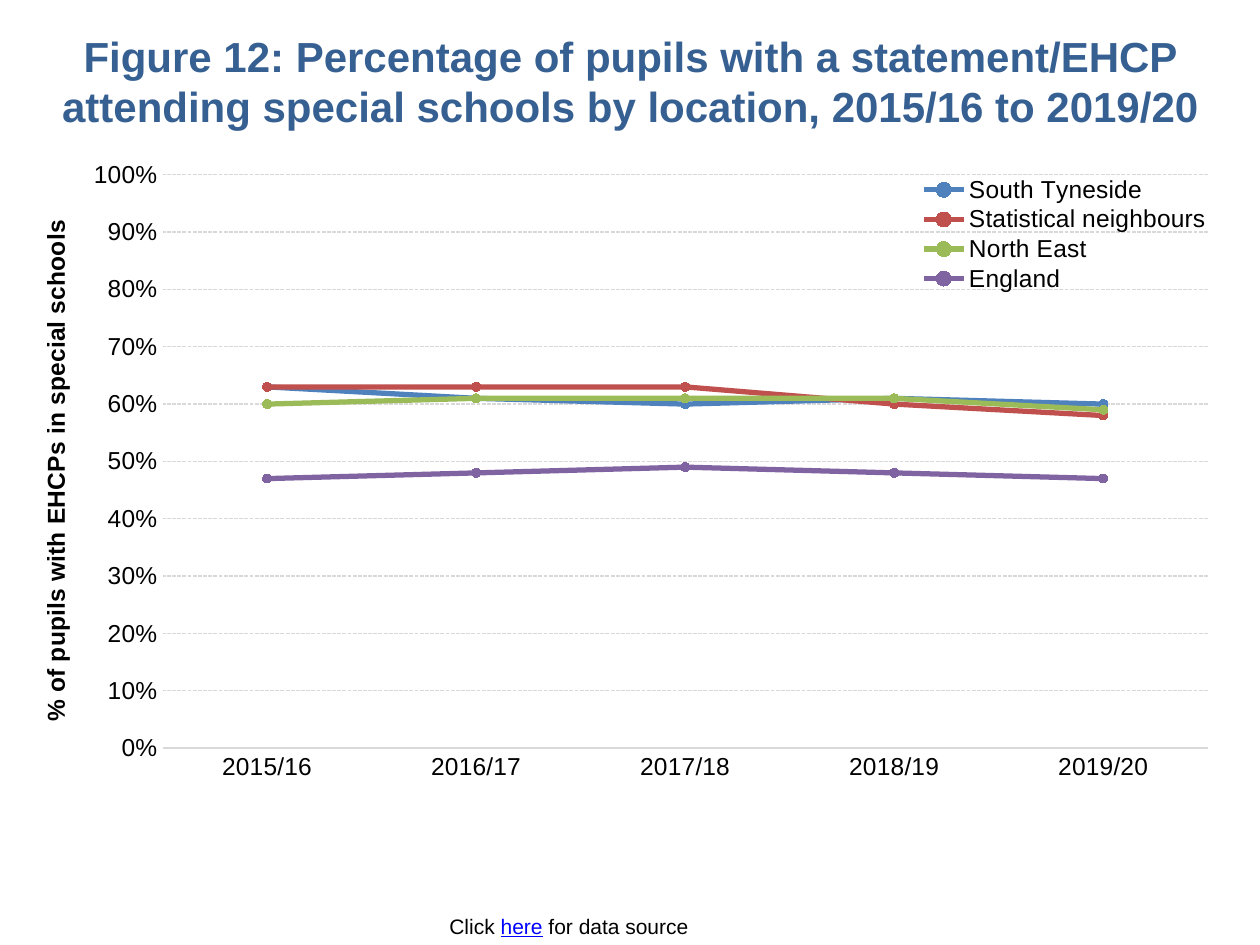
from lxml.etree import SubElement
from pptx import Presentation
from pptx.chart.data import CategoryChartData
from pptx.dml.color import RGBColor
from pptx.enum.chart import XL_CHART_TYPE, XL_LEGEND_POSITION, XL_MARKER_STYLE, XL_TICK_MARK
from pptx.enum.dml import MSO_LINE
from pptx.enum.text import MSO_ANCHOR, MSO_AUTO_SIZE, PP_ALIGN
from pptx.oxml.ns import qn
from pptx.util import Cm, Pt

YEARS = ["2015/16", "2016/17", "2017/18", "2018/19", "2019/20"]
LOCATIONS = [
    ("South Tyneside", "4F81BD", [0.63, 0.61, 0.60, 0.61, 0.60]),
    ("Statistical neighbours", "C0504D", [0.63, 0.63, 0.63, 0.60, 0.58]),
    ("North East", "9BBB59", [0.60, 0.61, 0.61, 0.61, 0.59]),
    ("England", "8064A2", [0.47, 0.48, 0.49, 0.48, 0.47]),
]


def color(hex_string):
    return RGBColor.from_string(hex_string)


def set_layout(element, index, x, y, width, height, inner=False):
    """Place a chart part by fractions of the chart area."""
    for old_layout in element.findall(qn("c:layout")):
        element.remove(old_layout)
    layout = SubElement(element, qn("c:layout"))
    element.insert(index, layout)
    manual = SubElement(layout, qn("c:manualLayout"))
    settings = [("layoutTarget", "inner")] if inner else []
    settings += [("xMode", "edge"), ("yMode", "edge"),
                 ("x", x), ("y", y), ("w", width), ("h", height)]
    for name, value in settings:
        SubElement(manual, qn(f"c:{name}")).set("val", str(value))


class SlideBuilder:
    font_name = "Arial"
    text_color = "000000"
    title_color = "376092"
    link_color = "0000FF"
    grid_color = "D9D9D9"
    chart_size = 14

    def __init__(self, slide):
        self.slide = slide

    def style_font(self, font, size, hex_string=text_color, bold=False):
        font.name = self.font_name
        font.size = Pt(size)
        font.bold = bold
        font.color.rgb = color(hex_string)

    def add_run(self, paragraph, text, size, hex_string=text_color, bold=False):
        run = paragraph.add_run()
        run.text = text
        self.style_font(run.font, size, hex_string, bold)
        return run

    def add_title(self, text, left, top, width, height):
        title = self.slide.shapes.title
        title.left, title.top, title.width, title.height = left, top, width, height
        frame = title.text_frame
        frame.vertical_anchor = MSO_ANCHOR.MIDDLE
        frame.auto_size = MSO_AUTO_SIZE.NONE
        paragraph = frame.paragraphs[0]
        paragraph.alignment = PP_ALIGN.CENTER
        self.add_run(paragraph, text, 24, self.title_color, True)

    def add_source_note(self, before, link, after, left, top, width, height):
        frame = self.slide.shapes.add_textbox(left, top, width, height).text_frame
        frame.word_wrap = True
        frame.auto_size = MSO_AUTO_SIZE.SHAPE_TO_FIT_TEXT
        frame.vertical_anchor = MSO_ANCHOR.MIDDLE
        paragraph = frame.paragraphs[0]
        paragraph.alignment = PP_ALIGN.CENTER
        self.add_run(paragraph, before, 12)
        self.add_run(paragraph, link, 12, self.link_color).font.underline = True
        self.add_run(paragraph, after, 12)

    def add_line_chart(self, categories, rows, axis_title, left, top, width, height):
        data = CategoryChartData(number_format="0%")
        data.categories = categories
        for name, _, values in rows:
            data.add_series(name, values)
        chart = self.slide.shapes.add_chart(
            XL_CHART_TYPE.LINE_MARKERS, left, top, width, height, data).chart
        self.style_font(chart.font, 10)
        chart.has_title = False
        chart.plots[0].vary_by_categories = False
        for series, (_, hex_string, _) in zip(chart.plots[0].series, rows):
            self.style_series(series, hex_string)
        self.style_axes(chart, axis_title)
        self.style_legend(chart)
        plot_area = chart.plots[0]._element.getparent()
        set_layout(plot_area, 0, 0.107, 0.041, 0.878, 0.857, inner=True)

    def style_series(self, series, hex_string):
        series.smooth = False
        series.format.line.color.rgb = color(hex_string)
        series.format.line.width = Pt(3)
        marker = series.marker
        marker.style = XL_MARKER_STYLE.CIRCLE
        marker.size = 5
        marker.format.fill.solid()
        marker.format.fill.fore_color.rgb = color(hex_string)
        marker.format.line.color.rgb = color(hex_string)

    def style_axes(self, chart, axis_title):
        for axis in (chart.category_axis, chart.value_axis):
            axis.major_tick_mark = axis.minor_tick_mark = XL_TICK_MARK.NONE
            self.style_font(axis.tick_labels.font, self.chart_size)
        value_axis = chart.value_axis
        value_axis.minimum_scale, value_axis.maximum_scale = 0, 1
        value_axis.major_unit = 0.1
        value_axis.tick_labels.number_format = "0%"
        value_axis.tick_labels.number_format_is_linked = False
        value_axis.format.line.fill.background()
        value_axis.has_major_gridlines = True
        grid_line = value_axis.major_gridlines.format.line
        for line in (grid_line, chart.category_axis.format.line):
            line.color.rgb = color(self.grid_color)
            line.width = Pt(0.75)
        grid_line.dash_style = MSO_LINE.SQUARE_DOT
        paragraph = value_axis.axis_title.text_frame.paragraphs[0]
        self.add_run(paragraph, axis_title, self.chart_size, bold=True)

    def style_legend(self, chart):
        chart.has_legend = True
        legend = chart.legend
        legend.position = XL_LEGEND_POSITION.RIGHT
        legend.include_in_layout = False
        self.style_font(legend.font, self.chart_size)
        set_layout(legend._element, 1, 0.74, 0.04, 0.25, 0.18)


def main():
    presentation = Presentation()
    presentation.slide_width, presentation.slide_height = Cm(25.4), Cm(19.05)
    slide = presentation.slides.add_slide(presentation.slide_layouts[5])
    builder = SlideBuilder(slide)
    left, width = Cm(0.71), Cm(24)
    builder.add_title(
        "Figure 12: Percentage of pupils with a statement/EHCP attending "
        "special schools by location, 2015/16 to 2019/20",
        left, Cm(0.56), width, Cm(2.13))
    builder.add_source_note("Click ", "here", " for data source",
                            Cm(8.74), Cm(18.29), Cm(5.46), Cm(0.76))
    builder.add_line_chart(YEARS, LOCATIONS, "% of pupils with EHCPs in special schools",
                           left, Cm(2.97), width, Cm(13.49))
    presentation.save("out.pptx")


if __name__ == "__main__":
    main()
